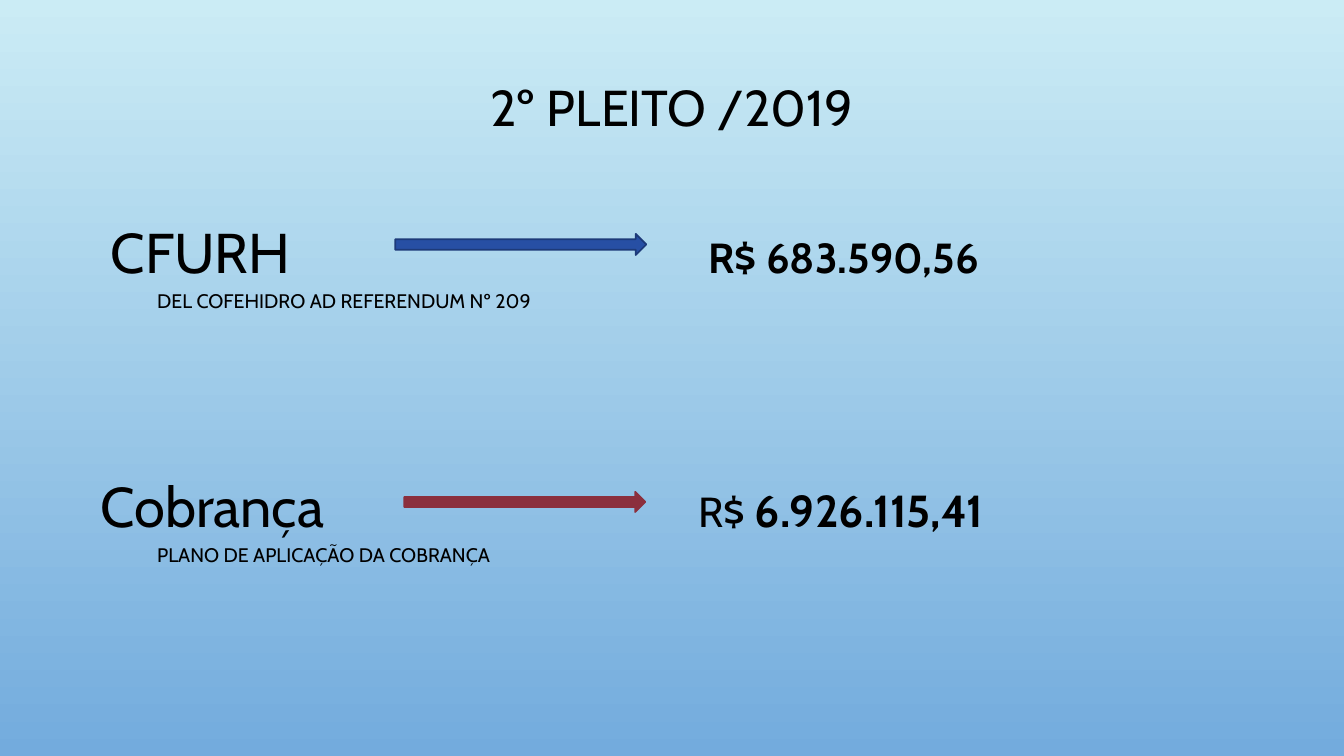
from pptx import Presentation
from pptx.dml.color import RGBColor
from pptx.enum.shapes import MSO_SHAPE
from pptx.enum.text import MSO_ANCHOR, PP_ALIGN
from pptx.util import Emu, Pt

EMU_PER_PX = 9144  # 100 px to the inch
TITLE_ONLY = 5

SKY = RGBColor(0xCB, 0xEC, 0xF5)
SEA = RGBColor(0x73, 0xAB, 0xDD)
BLACK = RGBColor(0, 0, 0)
BLUE = RGBColor(0x27, 0x4F, 0xA4)
NAVY = RGBColor(0x1D, 0x3A, 0x79)
WINE = RGBColor(0x8B, 0x2F, 0x3D)


def px(*lengths):
    return [Emu(length * EMU_PER_PX) for length in lengths]


def set_background(slide):
    fill = slide.background.fill
    fill.gradient()
    fill.gradient_angle = 270
    for stop, color in zip(fill.gradient_stops, (SKY, SEA)):
        stop.color.rgb = color


def write(paragraph, runs, line_spacing):
    """Fill a paragraph with runs given as (text, size, bold)."""
    paragraph.line_spacing = line_spacing
    for text, size, bold in runs:
        run = paragraph.add_run()
        run.text = text
        formats = {"name": "Cabin", "size": Pt(size), "bold": bold}
        for attribute, value in formats.items():
            setattr(run.font, attribute, value)
        run.font.color.rgb = BLACK


def add_title(slide, text, box):
    title = slide.shapes.title
    for attribute, value in zip(("left", "top", "width", "height"), px(*box)):
        setattr(title, attribute, value)
    title.text_frame.vertical_anchor = MSO_ANCHOR.MIDDLE
    paragraph = title.text_frame.paragraphs[0]
    paragraph.alignment = PP_ALIGN.CENTER
    write(paragraph, [(text, 36, False)], 0.9)


def add_text(slide, box, runs, line_spacing=1.2):
    frame = slide.shapes.add_textbox(*px(*box)).text_frame
    frame.word_wrap = True
    write(frame.paragraphs[0], runs, line_spacing)


def add_arrow(slide, box, fill_color, line_color):
    arrow = slide.shapes.add_shape(MSO_SHAPE.RIGHT_ARROW, *px(*box))
    arrow.shadow.inherit = False
    arrow.fill.solid()
    arrow.fill.fore_color.rgb = fill_color
    arrow.line.color.rgb = line_color
    arrow.line.width = Pt(1.25)


def main():
    presentation = Presentation()
    presentation.slide_width, presentation.slide_height = px(1333, 750)
    slide = presentation.slides.add_slide(presentation.slide_layouts[TITLE_ONLY])
    set_background(slide)
    add_title(slide, "2º PLEITO /2019", (100, 37, 1133, 145))

    add_text(slide, (100, 211, 223, 77), [("CFURH", 40, False)], 1.0)
    add_text(slide, (146, 277, 421, 45),
             [("DEL COFEHIDRO AD REFERENDUM Nº 209", 14, False)])
    add_arrow(slide, (392, 232, 249, 21), BLUE, NAVY)
    add_text(slide, (693, 215, 362, 61), [("R$ 683.590,56", 30, True)])

    add_text(slide, (90, 463, 281, 77), [("Cobrança", 40, False)], 1.0)
    add_text(slide, (146, 529, 421, 45),
             [("PLANO DE APLICAÇÃO DA COBRANÇA", 14, False)])
    add_arrow(slide, (401, 488, 239, 20), WINE, WINE)
    add_text(slide, (683, 463, 409, 61),
             [("R$ ", 30, False), ("6.926.115,41", 32, True)])

    presentation.save("out.pptx")


if __name__ == "__main__":
    main()
